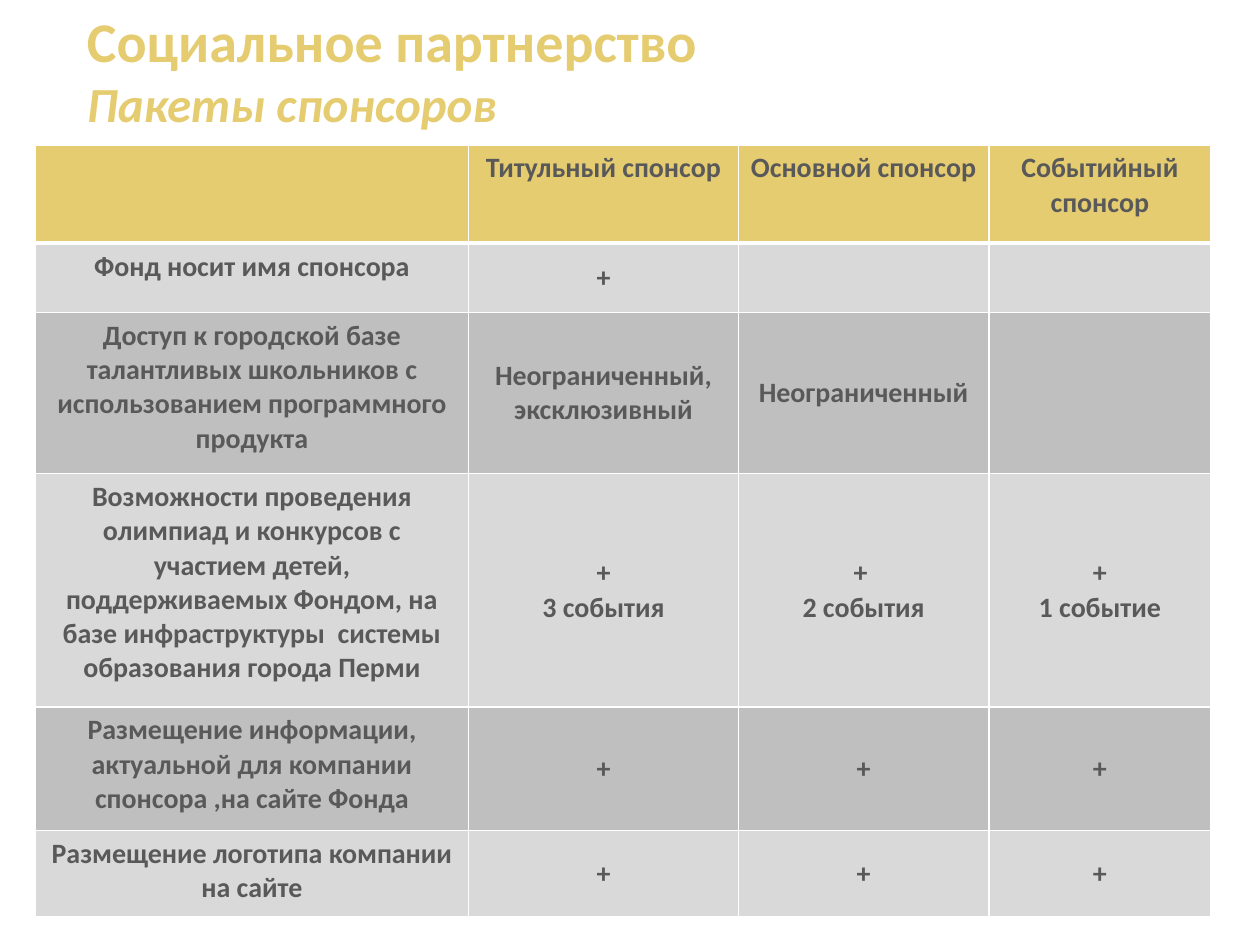
from lxml import etree
from pptx import Presentation
from pptx.dml.color import RGBColor
from pptx.enum.text import MSO_ANCHOR, MSO_AUTO_SIZE, PP_ALIGN
from pptx.oxml.ns import qn
from pptx.util import Inches, Pt

LEFT, CENTER = PP_ALIGN.LEFT, PP_ALIGN.CENTER
TOP, MIDDLE = MSO_ANCHOR.TOP, MSO_ANCHOR.MIDDLE
GOLD = RGBColor(0xE6, 0xCC, 0x70)
LIGHT = RGBColor(0xD9, 0xD9, 0xD9)
DARK = RGBColor(0xBF, 0xBF, 0xBF)
TEXT = RGBColor(0x59, 0x59, 0x59)
WHITE = RGBColor(0xFF, 0xFF, 0xFF)
FONT = "Calibri"

# Content
TITLE = [("Социальное партнерство", 32, False), ("Пакеты спонсоров", 28, True)]
COL_WIDTHS = [3.44, 2.14, 1.99, 1.76]
ROWS = [  # height, cell texts
    (0.78, ["", "Титульный спонсор", "Основной спонсор", "Событийный спонсор"]),
    (0.55, ["Фонд носит имя спонсора", "+", "", ""]),
    (1.28, ["Доступ к городской базе талантливых школьников с использованием "
            "программного продукта",
            "Неограниченный, эксклюзивный", "Неограниченный", ""]),
    (1.85, ["Возможности проведения олимпиад и конкурсов с участием детей, "
            "поддерживаемых Фондом, на базе инфраструктуры  системы "
            "образования города Перми",
            "+\n3 события", "+ \n2 события", "+\n1 событие"]),
    (0.98, ["Размещение информации, актуальной для компании спонсора ,на сайте Фонда",
            "+", "+", "+"]),
    (0.69, ["Размещение логотипа компании на сайте", "+", "+", "+"]),
]


def add_run(p, text, size, color, italic=False):
    r = p.add_run()
    r.text = text
    r.font.name = FONT
    r.font.size = Pt(size)
    r.font.bold = True
    r.font.italic = italic
    r.font.color.rgb = color


def write_lines(tf, lines, align):
    """Each line is (text, size, color, italic) and becomes a paragraph."""
    for i, line in enumerate(lines):
        p = tf.paragraphs[0] if i == 0 else tf.add_paragraph()
        p.alignment = align
        add_run(p, *line)


def set_borders(cell, top, bottom):
    """White borders; the lines come before the fill in the cell properties."""
    tc_pr = cell._tc.get_or_add_tcPr()
    for i, (side, width) in enumerate(zip("LRTB", (1, 1, top, bottom))):
        ln = etree.Element(qn(f"a:ln{side}"), w=str(Pt(width)))
        fill = etree.SubElement(ln, qn("a:solidFill"))
        etree.SubElement(fill, qn("a:srgbClr"), val=str(WHITE))
        tc_pr.insert(i, ln)


prs = Presentation()
prs.slide_width, prs.slide_height = Inches(10), Inches(7.5)
s = prs.slides.add_slide(prs.slide_layouts[5])

# Title with subtitle line
title = s.shapes.title
title.left, title.top = Inches(0.59), Inches(0)
title.width, title.height = Inches(5.1), Inches(1.11)
tf = title.text_frame
tf.auto_size = MSO_AUTO_SIZE.NONE
tf.word_wrap = False
tf.vertical_anchor = TOP
write_lines(tf, [(text, size, GOLD, italic) for text, size, italic in TITLE], LEFT)

# Table of sponsor packages
table = s.shapes.add_table(
    len(ROWS), len(COL_WIDTHS), Inches(0.28), Inches(1.15),
    Inches(sum(COL_WIDTHS)), Inches(sum(h for h, _ in ROWS))).table
for col, width in zip(table.columns, COL_WIDTHS):
    col.width = Inches(width)

for i, (height, texts) in enumerate(ROWS):
    table.rows[i].height = Inches(height)
    row_fill = GOLD if i == 0 else LIGHT if i % 2 else DARK
    for j, text in enumerate(texts):
        cell = table.cell(i, j)
        cell.fill.solid()
        cell.fill.fore_color.rgb = row_fill
        cell.vertical_anchor = MIDDLE if i and j else TOP
        set_borders(cell, top=3 if i == 1 else 1, bottom=3 if i == 0 else 1)
        if text:
            lines = [(line, 16, TEXT) for line in text.split("\n")]
            write_lines(cell.text_frame, lines, CENTER)

prs.save("out.pptx")
